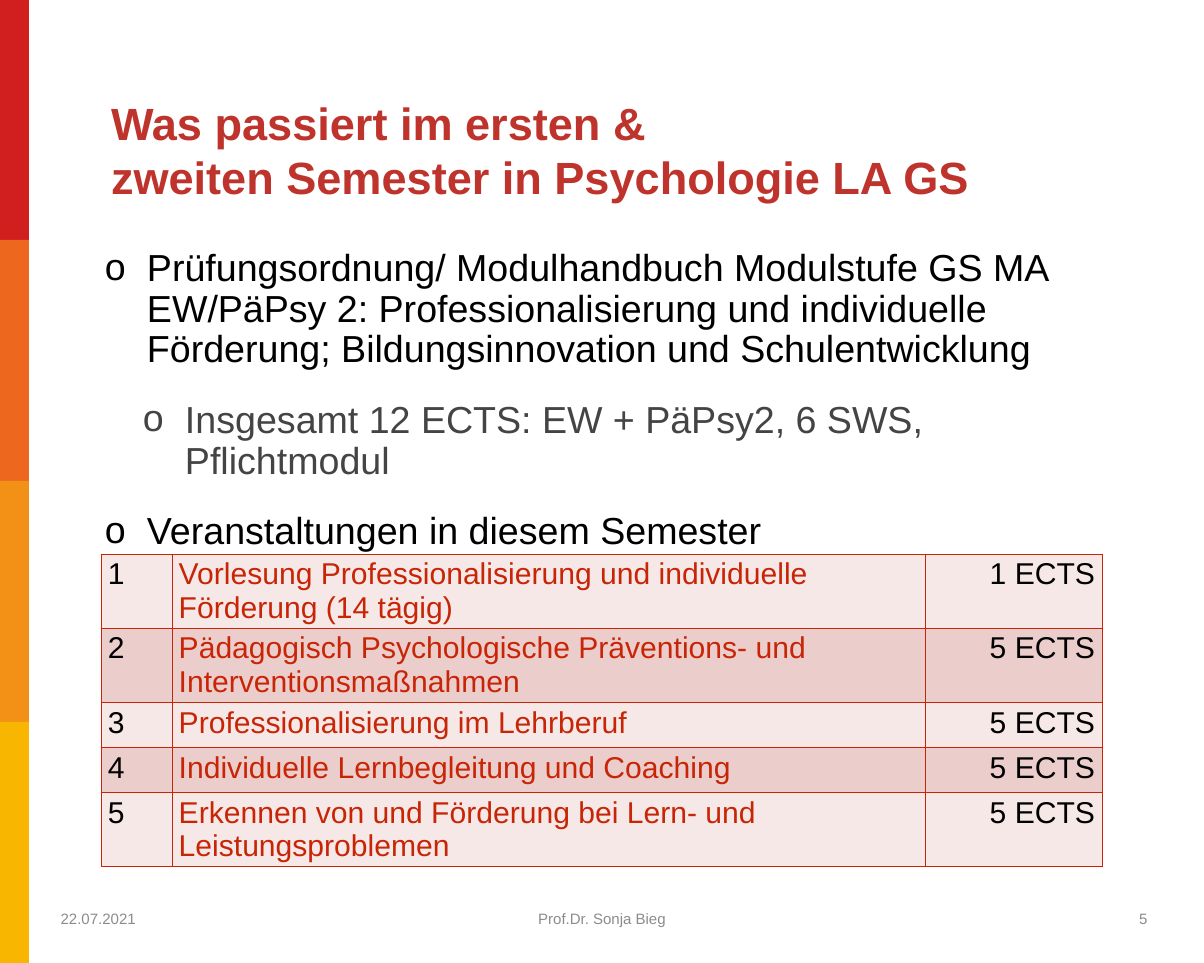
from lxml.etree import SubElement
from pptx import Presentation
from pptx.dml.color import RGBColor
from pptx.enum.shapes import MSO_SHAPE as Shape
from pptx.enum.text import MSO_ANCHOR as Anchor, MSO_AUTO_SIZE as AutoSize, PP_ALIGN as Align
from pptx.oxml.ns import qn
from pptx.util import Emu, Pt

EMU_PER_PX = 13507
WIDTH, HEIGHT = 1204, 963


def px(length):
    return Emu(length * EMU_PER_PX)


def colour(hex_code):
    return RGBColor.from_string(hex_code)


class SemesterSlide:
    font_name = "Arial"
    black, grey, footer_grey = "000000", "444444", "8C8C8C"
    title_red, table_red = "BE342C", "C82506"
    bands = ("F5E8E7", "EBCDCC")

    def __init__(self, slide):
        self.slide = slide

    def style(self, paragraph, size, hex_code, align=Align.LEFT, bold=False):
        paragraph.alignment = align
        font = paragraph.font
        font.name, font.size, font.bold = self.font_name, Pt(size), bold
        font.color.rgb = colour(hex_code)

    def place(self, placeholder, box, anchor):
        placeholder.left, placeholder.top, placeholder.width, placeholder.height = map(px, box)
        frame = placeholder.text_frame
        frame.auto_size, frame.word_wrap = AutoSize.NONE, True
        frame.vertical_anchor = anchor
        frame.margin_left = frame.margin_right = px(4)
        frame.margin_top = frame.margin_bottom = px(4)
        return frame

    def paragraphs(self, frame, lines):
        frame.text = "\n".join(lines)
        return frame.paragraphs

    def stripes(self, hex_codes, width):
        edges = [i * HEIGHT // len(hex_codes) for i in range(len(hex_codes) + 1)]
        for hex_code, top, bottom in zip(hex_codes, edges, edges[1:]):
            stripe = self.slide.shapes.add_shape(
                Shape.RECTANGLE, 0, px(top), px(width), px(bottom - top))
            stripe.shadow.inherit = False
            stripe.fill.solid()
            stripe.fill.fore_color.rgb = colour(hex_code)
            stripe.line.fill.background()

    def title(self, lines, box):
        frame = self.place(self.slide.shapes.title, box, Anchor.MIDDLE)
        for line in self.paragraphs(frame, lines):
            line.line_spacing = 1.0
            self.style(line, 48, self.title_red, bold=True)

    def bullet(self, paragraph, margin, hanging):
        props = paragraph._p.get_or_add_pPr()
        props.set("marL", str(px(margin)))
        props.set("indent", str(-px(hanging)))
        SubElement(props, qn("a:buFont"), typeface=self.font_name)
        SubElement(props, qn("a:buChar"), char="o")

    def bullets(self, items, box):
        frame = self.place(self.slide.placeholders[1], box, Anchor.TOP)
        points = self.paragraphs(frame, [text for _, text in items])
        for i, (point, (level, _)) in enumerate(zip(points, items)):
            point.level = level
            self.bullet(point, 42 + 38 * level, 42)
            point.line_spacing = 0.9
            point.space_before = Pt(32 if i else 0)
            self.style(point, 40, self.grey if level else self.black)

    def border(self, cell):
        props = cell._tc.get_or_add_tcPr()
        for i, side in enumerate(("lnL", "lnR", "lnT", "lnB")):
            line = props.makeelement(qn(f"a:{side}"), {"w": str(Pt(1))})
            fill = SubElement(line, qn("a:solidFill"))
            SubElement(fill, qn("a:srgbClr"), val=self.table_red)
            props.insert(i, line)

    def table(self, rows, left, top, widths, row_height):
        courses = self.slide.shapes.add_table(
            len(rows), len(widths), px(left), px(top),
            px(sum(widths)), px(row_height * len(rows))).table
        courses.first_row = courses.horz_banding = False
        for column, width in zip(courses.columns, widths):
            column.width = px(width)
        looks = ((self.black, Align.LEFT), (self.table_red, Align.LEFT), (self.black, Align.RIGHT))
        for r, row in enumerate(rows):
            courses.rows[r].height = px(row_height)
            for c, (text, (hex_code, align)) in enumerate(zip(row, looks)):
                cell = courses.cell(r, c)
                cell.text = text
                cell.fill.solid()
                cell.fill.fore_color.rgb = colour(self.bands[r % 2])
                self.border(cell)
                self.style(cell.text_frame.paragraphs[0], 32, hex_code, align)

    def footer(self, text, left, width, align):
        frame = self.slide.shapes.add_textbox(px(left), px(893), px(width), px(51)).text_frame
        frame.word_wrap = True
        frame.vertical_anchor = Anchor.MIDDLE
        frame.text = text
        self.style(frame.paragraphs[0], 16, self.footer_grey, align)


def main():
    deck = Presentation()
    deck.slide_width, deck.slide_height = px(WIDTH), px(HEIGHT)
    semester = SemesterSlide(deck.slides.add_slide(deck.slide_layouts[1]))

    # Colour stripes on the left edge
    semester.stripes(("D11F20", "EE671F", "F29115", "F9B600"), 29)

    # Title and list
    semester.title(("Was passiert im ersten &", "zweiten Semester in Psychologie LA GS"),
                   (107, 84, 1045, 131))
    semester.bullets((
        (0, "Prüfungsordnung/ Modulhandbuch Modulstufe GS MA EW/PäPsy 2: Professionalisierung "
            "und individuelle Förderung; Bildungsinnovation und Schulentwicklung"),
        (1, "Insgesamt 12 ECTS: EW + PäPsy2, 6 SWS, Pflichtmodul"),
        (0, "Veranstaltungen in diesem Semester"),
    ), (101, 245, 1017, 327))

    # Courses with their credits
    semester.table((
        ("1", "Vorlesung Professionalisierung und individuelle Förderung (14 tägig)", "1 ECTS"),
        ("2", "Pädagogisch Psychologische Präventions- und Interventionsmaßnahmen", "5 ECTS"),
        ("3", "Professionalisierung im Lehrberuf", "5 ECTS"),
        ("4", "Individuelle Lernbegleitung und Coaching", "5 ECTS"),
        ("5", "Erkennen von und Förderung bei Lern- und Leistungsproblemen", "5 ECTS"),
    ), 101, 554, (71, 753, 177), 45)

    # Footer
    semester.footer("22.07.2021", 54, 271, Align.LEFT)
    semester.footer("Prof.Dr. Sonja Bieg", 399, 406, Align.CENTER)
    semester.footer("5", 850, 304, Align.RIGHT)

    deck.save("out.pptx")


if __name__ == "__main__":
    main()
